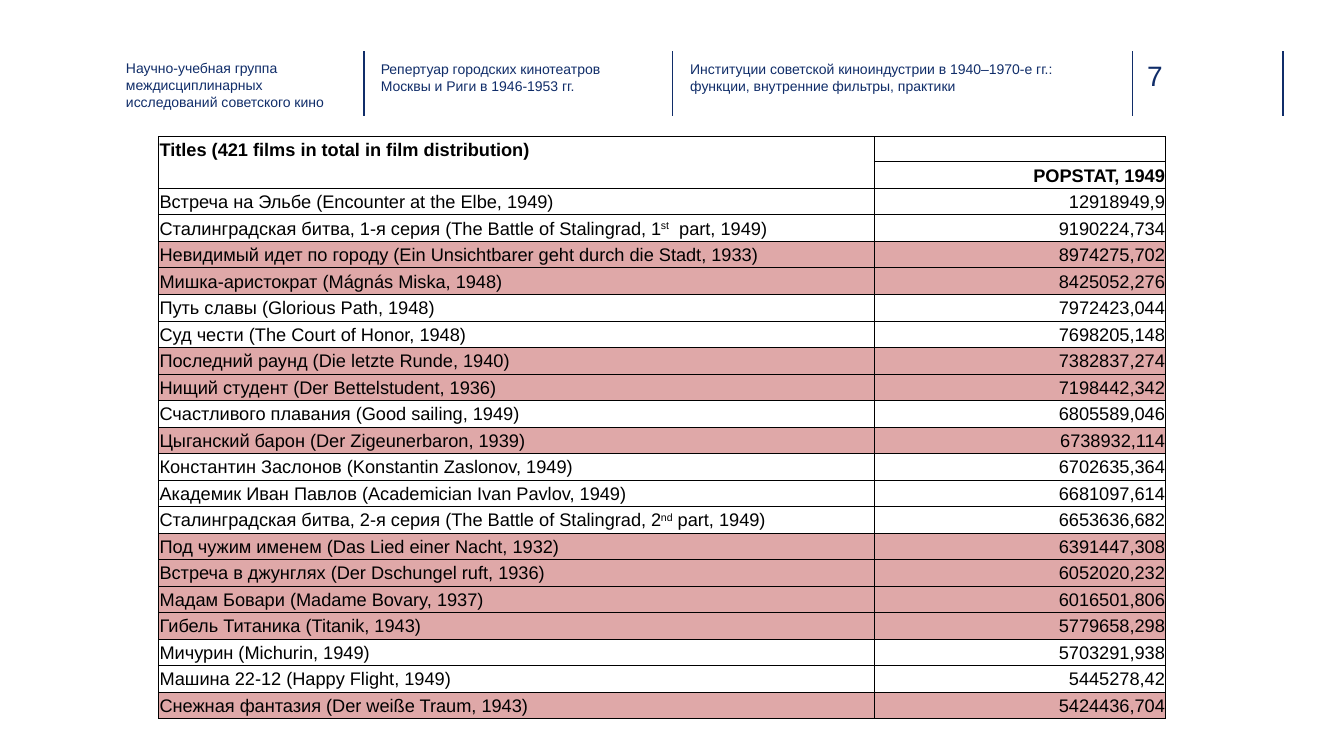
from lxml import etree
from pptx import Presentation
from pptx import util as u
from pptx.dml.color import RGBColor
from pptx.enum import shapes, text
from pptx.oxml import ns

NAVY, BLACK, WHITE, PINK = "102D69", "000000", "FFFFFF", "DFA8A8"
RULES = [260, 480.5, 809, 916.5]
HEADINGS = [
    (90, 42.5, 162, "Научно-учебная группа междисциплинарных исследований советского кино"),
    (272, 43, 191, "Репертуар городских кинотеатров Москвы и Риги в 1946-1953 гг."),
    (493, 43, 289, "Институции советской киноиндустрии в 1940–1970-е гг.: "
                   "функции, внутренние фильтры, практики"),
]
TABLE_TITLE = "Titles (421 films in total in film distribution)"
VALUE_TITLE = "POPSTAT, 1949"
# Title (superscripts between carets), value, highlighted
FILMS = [
    ("Встреча на Эльбе (Encounter at the Elbe, 1949)", "12918949,9", False),
    ("Сталинградская битва, 1-я серия (The Battle of Stalingrad, 1^st^  part, 1949)", "9190224,734", False),
    ("Невидимый идет по городу (Ein Unsichtbarer geht durch die Stadt, 1933)", "8974275,702", True),
    ("Мишка-аристократ (Mágnás Miska, 1948)", "8425052,276", True),
    ("Путь славы (Glorious Path, 1948)", "7972423,044", False),
    ("Суд чести (The Court of Honor, 1948)", "7698205,148", False),
    ("Последний раунд (Die letzte Runde, 1940)", "7382837,274", True),
    ("Нищий студент (Der Bettelstudent, 1936)", "7198442,342", True),
    ("Счастливого плавания (Good sailing, 1949)", "6805589,046", False),
    ("Цыганский барон (Der Zigeunerbaron, 1939)", "6738932,114", True),
    ("Константин Заслонов (Konstantin Zaslonov, 1949)", "6702635,364", False),
    ("Академик Иван Павлов (Academician Ivan Pavlov, 1949)", "6681097,614", False),
    ("Сталинградская битва, 2-я серия (The Battle of Stalingrad, 2^nd^ part, 1949)", "6653636,682", False),
    ("Под чужим именем (Das Lied einer Nacht, 1932)", "6391447,308", True),
    ("Встреча в джунглях (Der Dschungel ruft, 1936)", "6052020,232", True),
    ("Мадам Бовари (Madame Bovary, 1937)", "6016501,806", True),
    ("Гибель Титаника (Titanik, 1943)", "5779658,298", True),
    ("Мичурин (Michurin, 1949)", "5703291,938", False),
    ("Машина 22-12 (Happy Flight, 1949)", "5445278,42", False),
    ("Снежная фантазия (Der weiße Traum, 1943)", "5424436,704", True),
]


def color(value):
    return RGBColor.from_string(value)


def apply(target, values):
    for name, value in values.items():
        setattr(target, name, value)


def add_xml(parent, tag, **attributes):
    return etree.SubElement(parent, ns.qn(tag), attributes)


class Page:
    font = "Arial"
    cell_size = 13
    cell_inset = 0.5

    def __init__(self, deck):
        self.slide = deck.slides.add_slide(deck.slide_layouts[6])

    def add_text(self, para, content, size, ink, bold=False):
        """Fill a paragraph; every second caret-separated part is superscript."""
        for index, part in enumerate(content.split("^")):
            span = para.add_run()
            span.text = part
            apply(span.font, {"name": self.font, "size": u.Pt(size), "bold": bold})
            span.font.color.rgb = color(ink)
            if index % 2:
                span._r.get_or_add_rPr().set("baseline", "30000")

    def rule(self, x, top, bottom):
        line = self.slide.shapes.add_connector(
            shapes.MSO_CONNECTOR.STRAIGHT, u.Pt(x), u.Pt(top), u.Pt(x), u.Pt(bottom))
        line.line.color.rgb = color(NAVY)
        line.line.width = u.Pt(1)
        add_xml(line._element.spPr, "a:effectLst")

    def label(self, left, top, width, height, content, size):
        box = self.slide.shapes.add_textbox(u.Pt(left), u.Pt(top), u.Pt(width), u.Pt(height))
        apply(box.text_frame, {"word_wrap": True, "margin_left": 0, "margin_right": 0,
                               "margin_top": 0, "margin_bottom": 0})
        self.add_text(box.text_frame.paragraphs[0], content, size, NAVY)

    def cell(self, cell, content, fill, align, bold):
        inset = u.Pt(self.cell_inset)
        apply(cell, {"margin_left": inset, "margin_right": inset,
                     "margin_top": inset, "margin_bottom": inset})
        properties = cell._tc.get_or_add_tcPr()
        for side in "LRTB":
            border = add_xml(properties, f"a:ln{side}", w=str(u.Pt(0.75)))
            add_xml(add_xml(border, "a:solidFill"), "a:srgbClr", val=BLACK)
        cell.fill.solid()
        cell.fill.fore_color.rgb = color(fill)
        para = cell.text_frame.paragraphs[0]
        apply(para, {"alignment": align, "line_spacing": 1.15})
        if content:
            self.add_text(para, content, self.cell_size, BLACK, bold)
        else:
            add_xml(para._p, "a:endParaRPr", sz=str(self.cell_size * 100))

    def table(self, left, top, widths, row_height, rows, header_rows):
        """Draw rows of (title, value, highlighted) under a merged title cell."""
        frame = self.slide.shapes.add_table(
            len(rows), len(widths), u.Pt(left), u.Pt(top),
            u.Pt(sum(widths)), u.Pt(row_height * len(rows)))
        table = frame.table
        apply(table, {"first_row": False, "horz_banding": False})
        for column, width in zip(table.columns, widths):
            column.width = u.Pt(width)
        aligns = (text.PP_ALIGN.LEFT, text.PP_ALIGN.RIGHT)
        for index, (*contents, highlighted) in enumerate(rows):
            table.rows[index].height = u.Pt(row_height)
            for column, (content, align) in enumerate(zip(contents, aligns)):
                self.cell(table.cell(index, column), content,
                          PINK if highlighted else WHITE, align, index < header_rows)
        table.cell(0, 0).merge(table.cell(header_rows - 1, 0))


def main():
    deck = Presentation()
    apply(deck, {"slide_width": u.Pt(960), "slide_height": u.Pt(540)})
    page = Page(deck)
    for x in RULES:
        page.rule(x, 36.5, 83)
    page.label(819.5, 42, 52.5, 24.5, "7", 20)
    for left, top, width, content in HEADINGS:
        page.label(left, top, width, 32.5, content, 10)
    header = [(TABLE_TITLE, "", False), ("", VALUE_TITLE, False)]
    page.table(113.5, 97.5, (511, 208), 18.15, header + FILMS, len(header))
    deck.save("out.pptx")


if __name__ == "__main__":
    main()
